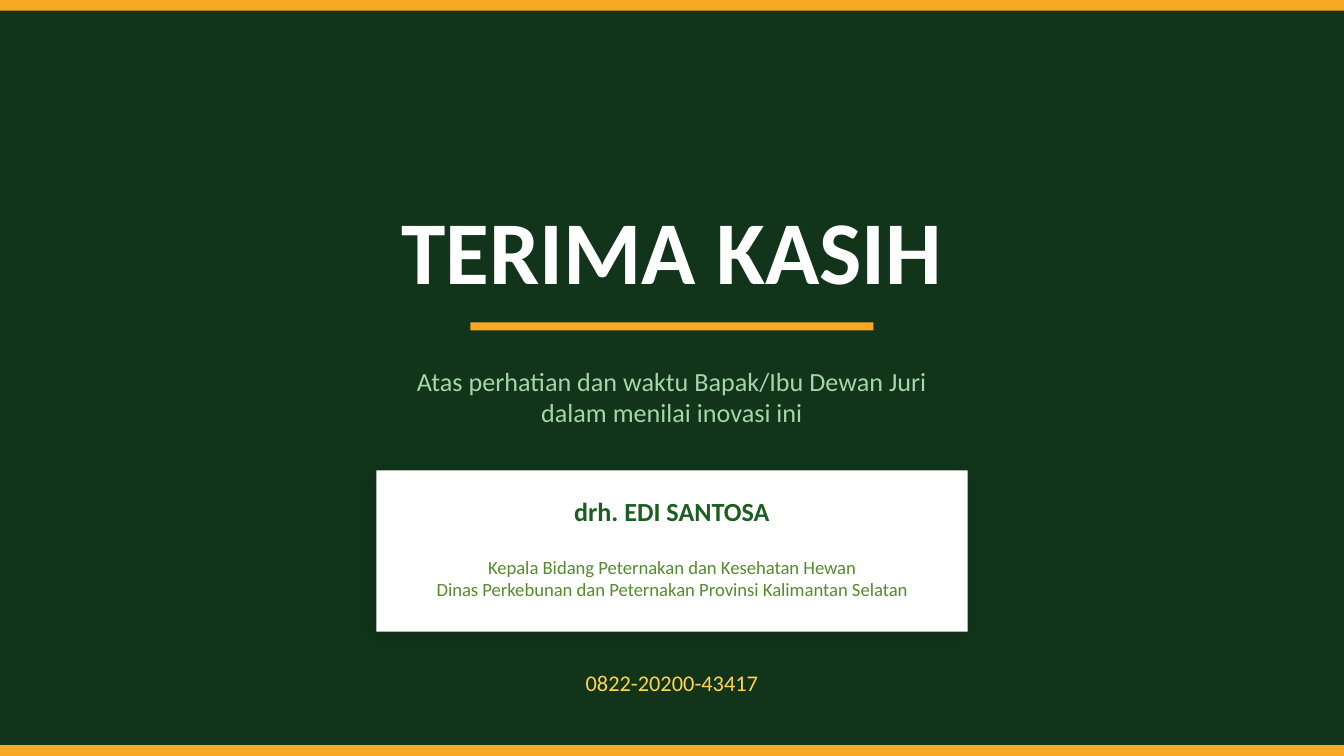
from lxml import etree
from pptx import Presentation
from pptx.dml.color import RGBColor
from pptx.enum.shapes import MSO_SHAPE
from pptx.enum.text import MSO_ANCHOR, PP_ALIGN
from pptx.oxml import parse_xml
from pptx.oxml.ns import nsdecls, qn
from pptx.util import Inches, Pt

DEEP_GREEN = RGBColor(0x0D, 0x28, 0x18)
LEAF_GREEN = RGBColor(0x2E, 0x7D, 0x32)
AMBER = RGBColor(0xF9, 0xA8, 0x25)
WHITE = RGBColor(0xFF, 0xFF, 0xFF)
PALE_GREEN = RGBColor(0xA5, 0xD6, 0xA7)
NAME_GREEN = RGBColor(0x1B, 0x5E, 0x20)
ROLE_GREEN = RGBColor(0x55, 0x8B, 0x2F)
LIGHT_AMBER = RGBColor(0xFF, 0xD5, 0x4F)

FONT = "Calibri"
SLIDE_W = Inches(10)
SLIDE_H = SLIDE_W * 9 // 16
BAND_H = Inches(0.08)


def add_block(slide, left, top, width, height, color):
    """Add a plain filled rectangle."""
    block = slide.shapes.add_shape(MSO_SHAPE.RECTANGLE, left, top, width, height)
    block.shadow.inherit = False
    block.fill.solid()
    block.fill.fore_color.rgb = color
    block.line.fill.background()
    return block


def add_text(slide, left, top, width, height, lines, size, color, bold=False):
    """Add centred text with one paragraph for each line."""
    frame = slide.shapes.add_textbox(left, top, width, height).text_frame
    frame.word_wrap = True
    frame.vertical_anchor = MSO_ANCHOR.MIDDLE
    frame.text = "\n".join(lines)
    for paragraph in frame.paragraphs:
        paragraph.alignment = PP_ALIGN.CENTER
        for run in paragraph.runs:
            run.font.name = FONT
            run.font.size = Pt(size)
            run.font.bold = bold
            run.font.color.rgb = color


def add_backdrop(slide, left, top, width, height):
    """Fill the background, tint it and edge it with two amber bands."""
    slide.background.fill.solid()
    slide.background.fill.fore_color.rgb = DEEP_GREEN
    tint = add_block(slide, left, top, width, height, LEAF_GREEN)
    tint_color = next(tint.element.spPr.iter(qn("a:srgbClr")))
    etree.SubElement(tint_color, qn("a:alpha"), val="15000")
    for band_top in (top, top + height - BAND_H):
        add_block(slide, left, band_top, width, BAND_H, AMBER)


def add_thanks(slide, left, top, width):
    """Place the headline, its rule and the message to the jury."""
    add_text(slide, left, top, width, Inches(0.9), ["TERIMA KASIH"], 48, WHITE, True)
    rule_w = Inches(3)
    add_block(slide, left + (width - rule_w) // 2, top + Inches(1),
              rule_w, Inches(0.06), AMBER)
    message = ["Atas perhatian dan waktu Bapak/Ibu Dewan Juri",
               "dalam menilai inovasi ini"]
    add_text(slide, left, top + Inches(1.2), width, Inches(0.7),
             message, 14, PALE_GREEN)


def add_presenter_card(slide, left, top, width, height):
    """Place the shadowed card with the presenter's name and role."""
    card = add_block(slide, left, top, width, height, WHITE)
    shadow = parse_xml(
        f'<a:outerShdw {nsdecls("a")} blurRad="{Pt(8)}" dist="{Pt(3)}" '
        f'dir="{135 * 60000}" algn="bl" rotWithShape="0">'
        '<a:srgbClr val="000000"><a:alpha val="12000"/></a:srgbClr></a:outerShdw>')
    card.element.spPr.find(qn("a:effectLst")).append(shadow)
    add_text(slide, left, top + Inches(0.1), width, Inches(0.4),
             ["drh. EDI SANTOSA"], 14, NAME_GREEN, True)
    role = ["Kepala Bidang Peternakan dan Kesehatan Hewan",
            "Dinas Perkebunan dan Peternakan Provinsi Kalimantan Selatan"]
    add_text(slide, left, top + Inches(0.5), width, Inches(0.6), role, 10, ROLE_GREEN)


def add_contact(slide, left, top, width, height):
    """Place the phone number."""
    add_text(slide, left, top, width, height, ["0822-20200-43417"], 12, LIGHT_AMBER)


def main():
    """Build and save the closing slide."""
    deck = Presentation()
    deck.slide_width, deck.slide_height = SLIDE_W, SLIDE_H
    slide = deck.slides.add_slide(deck.slide_layouts[6])
    add_backdrop(slide, 0, 0, SLIDE_W, SLIDE_H)
    add_thanks(slide, 0, Inches(1.4), SLIDE_W)
    card_w = Inches(4.4)
    add_presenter_card(slide, (SLIDE_W - card_w) // 2, Inches(3.5), card_w, Inches(1.2))
    add_contact(slide, 0, Inches(4.9), SLIDE_W, Inches(0.35))
    deck.save("out.pptx")


if __name__ == "__main__":
    main()
